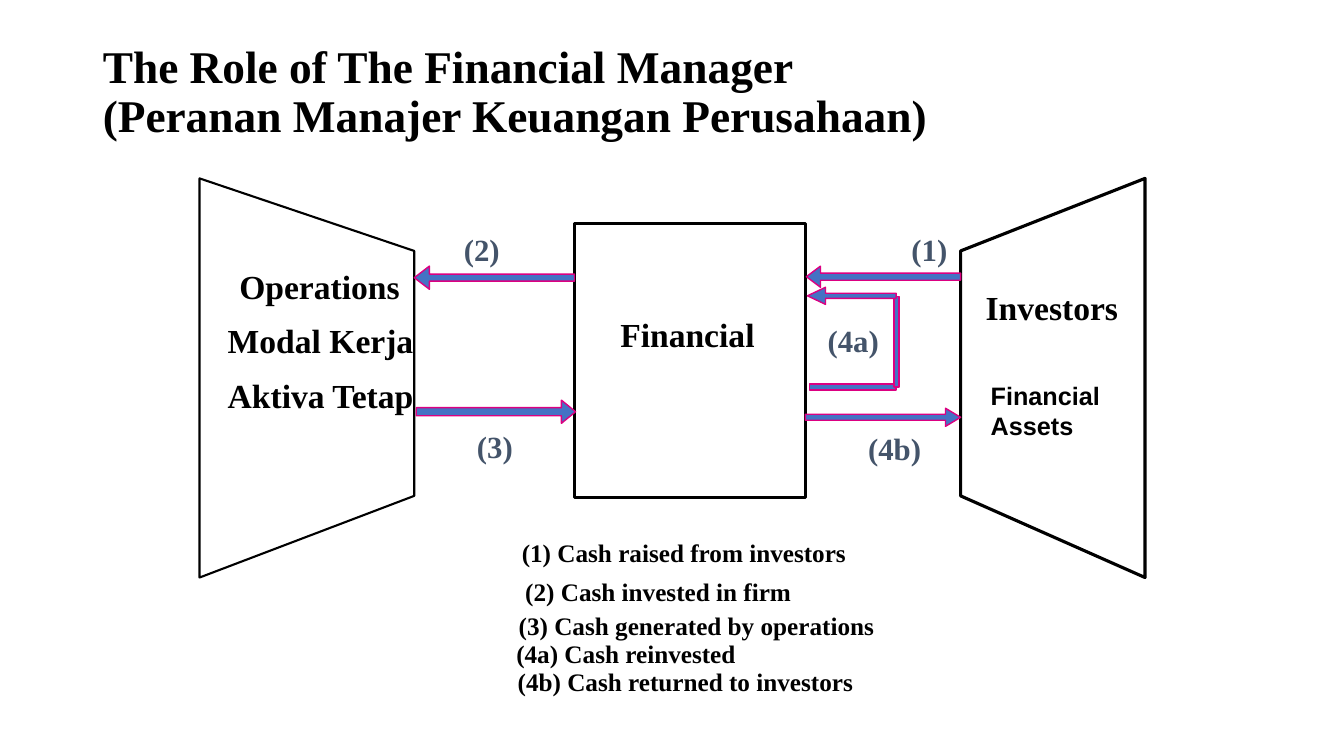
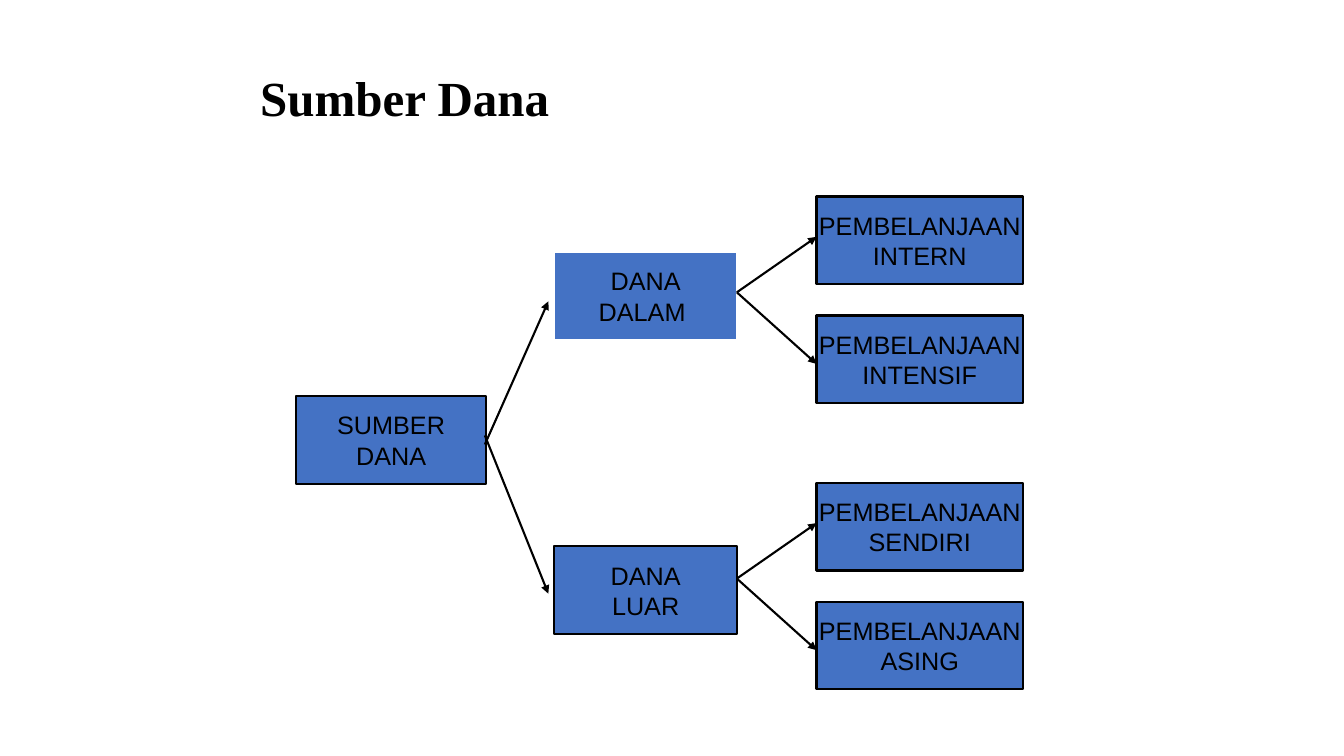
"""Build two slides on the financial manager's role and sources of funds."""
from dataclasses import dataclass
from typing import Any

from lxml import etree
from pptx import Presentation
from pptx.dml.color import RGBColor
from pptx.enum.shapes import MSO_CONNECTOR, MSO_SHAPE
from pptx.enum.text import MSO_ANCHOR, MSO_AUTO_SIZE, PP_ALIGN
from pptx.oxml.ns import qn
from pptx.util import Inches, Pt

RECTANGLE = MSO_SHAPE.RECTANGLE
STRAIGHT = MSO_CONNECTOR.STRAIGHT
TOP, MIDDLE = MSO_ANCHOR.TOP, MSO_ANCHOR.MIDDLE
LEFT, CENTER = PP_ALIGN.LEFT, PP_ALIGN.CENTER
NO_FIT, GROW = MSO_AUTO_SIZE.NONE, MSO_AUTO_SIZE.SHAPE_TO_FIT_TEXT
TITLE_ONLY = 5
CELL = Inches(0.1)
COLUMNS, ROWS = 133.33, 75


@dataclass(frozen=True)
class TextStyle:
    """Font, size, colour and weight of a text."""
    name: str
    size: float
    color: str
    bold: bool = True


@dataclass(frozen=True)
class Theme:
    """Colours, type styles and line widths of the deck."""
    ink: str = "000000"
    paper: str = "FFFFFF"
    fill: str = "4472C4"
    edge: str = "DC0081"
    thin: float = 1
    medium: float = 1.5
    thick: float = 2.25
    title: TextStyle = TextStyle("Times New Roman", 32.4, "000000")
    topic: TextStyle = TextStyle("Times New Roman", 35, "000000")
    party: TextStyle = TextStyle("Times New Roman", 24, "000000")
    step: TextStyle = TextStyle("Times New Roman", 22, "44546A")
    legend: TextStyle = TextStyle("Times New Roman", 18, "000000")
    asset: TextStyle = TextStyle("Arial", 18, "000000")
    node: TextStyle = TextStyle("Arial", 18, "000000", False)


THEME = Theme()


@dataclass(frozen=True)
class Area:
    """A rectangle in grid columns and rows."""
    left: float
    top: float
    width: float
    height: float

    def lengths(self) -> list[int]:
        """Return the rectangle in slide units."""
        return [grid(value) for value in (self.left, self.top, self.width, self.height)]


@dataclass(frozen=True)
class Label:
    """A free-standing text on the grid."""
    text: str
    area: Area
    style: TextStyle
    wrap: bool = False
    align: Any = CENTER


@dataclass(frozen=True)
class Arrow:
    """A horizontal block arrow from tail to tip."""
    tip: float
    tail: float
    row: float
    head_length: float
    head_height: float
    shaft_height: float

    def outline(self) -> list[tuple[float, float]]:
        """Return the corners of the arrow."""
        neck = self.tip + (self.head_length if self.tail > self.tip else -self.head_length)
        head, shaft = self.head_height / 2, self.shaft_height / 2
        upper = [(neck, -head), (neck, -shaft), (self.tail, -shaft)]
        lower = [(column, -offset) for column, offset in reversed(upper)]
        return [(column, self.row + offset) for column, offset in [(self.tip, 0), *upper, *lower]]


@dataclass(frozen=True)
class Node:
    """A box of the tree."""
    lines: tuple[str, str]
    area: Area
    line: str = THEME.ink


@dataclass(frozen=True)
class Branch:
    """An arrow between two grid points."""
    start: tuple[float, float]
    end: tuple[float, float]


def grid(value: float) -> int:
    """Turn grid cells into slide units."""
    return round(value * CELL)


def set_values(target: Any, values: dict[str, Any]) -> None:
    """Set each named value on the target."""
    for name, value in values.items():
        setattr(target, name, value)


def write(box: Any, lines: tuple[str, ...], style: TextStyle,
          frame_format: dict[str, Any], para_format: dict[str, Any]) -> None:
    """Write formatted paragraphs into a box."""
    frame = box.text_frame
    set_values(frame, frame_format)
    frame.text = "\n".join(lines)
    for para in frame.paragraphs:
        set_values(para, para_format)
        for span in para.runs:
            set_values(span.font, {"name": style.name, "size": Pt(style.size), "bold": style.bold})
            span.font.color.rgb = RGBColor.from_string(style.color)


def paint(shape: Any, fill: str | None, line: str, width: float) -> None:
    """Fill and outline a shape without shadow."""
    shape.shadow.inherit = False
    if fill:
        shape.fill.solid()
        shape.fill.fore_color.rgb = RGBColor.from_string(fill)
    else:
        shape.fill.background()
    shape.line.color.rgb = RGBColor.from_string(line)
    shape.line.width = Pt(width)


def add_titled_page(deck: Any, text: str, area: Area, style: TextStyle, anchor: Any) -> Any:
    """Add a page with a placed title."""
    page = deck.slides.add_slide(deck.slide_layouts[TITLE_ONLY])
    title = page.shapes.title
    set_values(title, dict(zip(("left", "top", "width", "height"), area.lengths())))
    write(title, (text,), style,
          {"word_wrap": True, "auto_size": NO_FIT, "vertical_anchor": anchor},
          {"alignment": LEFT, "line_spacing": 0.9})
    return page


def add_label(page: Any, label: Label) -> None:
    """Add a text box."""
    box = page.shapes.add_textbox(*label.area.lengths())
    write(box, (label.text,), label.style, {"word_wrap": label.wrap, "auto_size": GROW},
          {"alignment": label.align})


def add_box(page: Any, area: Area, fill: str | None, line: str, width: float) -> Any:
    """Add a painted rectangle."""
    box = page.shapes.add_shape(RECTANGLE, *area.lengths())
    paint(box, fill, line, width)
    return box


def add_outline(page: Any, points: list[tuple[float, float]],
                fill: str | None, line: str, width: float) -> None:
    """Add a closed polygon."""
    corners = [(grid(column), grid(row)) for column, row in points]
    builder = page.shapes.build_freeform(*corners[0], scale=1)
    builder.add_line_segments(corners[1:], close=True)
    paint(builder.convert_to_shape(), fill, line, width)


def add_node(page: Any, node: Node) -> None:
    """Add a tree box with its text."""
    box = add_box(page, node.area, THEME.fill, node.line, THEME.medium)
    write(box, node.lines, THEME.node, {"word_wrap": False, "vertical_anchor": MIDDLE},
          {"alignment": CENTER})


def add_branch(page: Any, branch: Branch) -> None:
    """Add a line with an arrowhead."""
    points = [grid(value) for value in (*branch.start, *branch.end)]
    connector = page.shapes.add_connector(STRAIGHT, *points)
    connector.line.color.rgb = RGBColor.from_string(THEME.ink)
    connector.line.width = Pt(THEME.medium)
    etree.SubElement(connector.line._get_or_add_ln(), qn("a:tailEnd"), type="triangle")
    etree.SubElement(connector._element.spPr, qn("a:effectLst"))


def build_role_page(deck: Any) -> None:
    """Draw the cash flows around the financial manager."""
    page = add_titled_page(
        deck, "The Role of The Financial Manager \v(Peranan Manajer Keuangan Perusahaan)",
        Area(9.2, 4, 115, 10.6), THEME.title, MIDDLE)
    add_box(page, Area(57, 22.2, 22.9, 27.2), None, THEME.ink, THEME.thick)
    for inner, outer, width in ((41.1, 19.8, THEME.medium), (95.3, 113.6, THEME.thick)):
        add_outline(page, [(inner, 49.2), (inner, 24.9), (outer, 17.7), (outer, 57.3)],
                    None, THEME.ink, width)
    arrows = (
        Arrow(80, 95.3, 27.45, 1.4, 2.1, 0.7),
        Arrow(41.1, 57, 27.55, 1.5, 2.3, 0.7),
        Arrow(57.1, 41.3, 40.85, 1.4, 2.3, 0.8),
        Arrow(95.3, 79.9, 41.4, 1.5, 1.8, 0.6),
    )
    for arrow in arrows:
        add_outline(page, arrow.outline(), THEME.fill, THEME.edge, THEME.thin)
    for bar in (Area(80.3, 38.1, 8.6, 0.6), Area(88.7, 29.4, 0.5, 9)):
        add_box(page, bar, THEME.fill, THEME.edge, THEME.thin)
    add_outline(page, Arrow(80.1, 88.9, 29.35, 1.8, 1.7, 0.5).outline(),
                THEME.fill, THEME.edge, THEME.thin)
    labels = [
        Label(text, Area(left, top, width, height), style)
        for style, height, entries in (
            (THEME.party, 5, (
                ("Operations", 22.5, 25.9, 18.4),
                ("Modal Kerja", 21.5, 31.2, 20.6),
                ("Aktiva Tetap", 21.5, 36.7, 20.6),
                ("Financial", 60.5, 30.7, 15.4),
                ("Investors", 96.7, 28, 15.3))),
            (THEME.step, 4.6, (
                ("(1)", 89.4, 22.4, 5.6),
                ("(2)", 45, 22.4, 5.6),
                ("(3)", 46.3, 41.9, 5.6),
                ("(4a)", 81.1, 31.4, 7.1),
                ("(4b)", 85.1, 42.1, 7.3))),
            (THEME.legend, 4, (
                ("(1) Cash raised from investors", 50.6, 52.8, 34.5),
                ("(2) Cash invested in firm", 51, 56.7, 28.6),
                ("(3) Cash generated by operations", 50.3, 60.1, 37.6),
                ("(4a) Cash reinvested", 50.1, 62.8, 24),
                ("(4b) Cash returned to investors", 50.2, 65.6, 35.6))),
        )
        for text, left, top, width in entries
    ]
    labels.append(Label("Financial Assets", Area(97.3, 37.2, 14.2, 7), THEME.asset, True, LEFT))
    for label in labels:
        add_label(page, label)


def build_sources_page(deck: Any) -> None:
    """Draw the tree of fund sources."""
    page = add_titled_page(deck, "Sumber Dana", Area(24.8, 6.9, 90, 8), THEME.topic, TOP)
    height, leaf_left, leaf_step, fork = 8.7, 81, 11.8, 73.1
    nodes = [
        Node(("SUMBER", "DANA"), Area(29.4, 39.3, 18.8, height)),
        Node(("DANA", "DALAM "), Area(55, 25, 18.1, height), THEME.paper),
        Node(("DANA", "LUAR"), Area(55, 54.2, 18.1, height)),
    ]
    branches = [Branch((48.1, 44.1), (54.4, 29.9)), Branch((48.1, 43.2), (54.4, 58.9))]
    for top, kinds in ((19.5, ("INTERN", "INTENSIF")), (47.9, ("SENDIRI", "ASING"))):
        start = top + 9.5
        for index, (kind, drop) in enumerate(zip(kinds, (-5.5, 7.1))):
            area = Area(leaf_left, top + index * leaf_step, 20.5, height)
            nodes.append(Node(("PEMBELANJAAN", kind), area))
            branches.append(Branch((fork, start), (leaf_left, start + drop)))
    for node in nodes:
        add_node(page, node)
    for branch in branches:
        add_branch(page, branch)


def main() -> None:
    """Build and save the deck."""
    deck = Presentation()
    set_values(deck, {"slide_width": grid(COLUMNS), "slide_height": grid(ROWS)})
    build_role_page(deck)
    build_sources_page(deck)
    deck.save("out.pptx")


if __name__ == "__main__":
    main()
